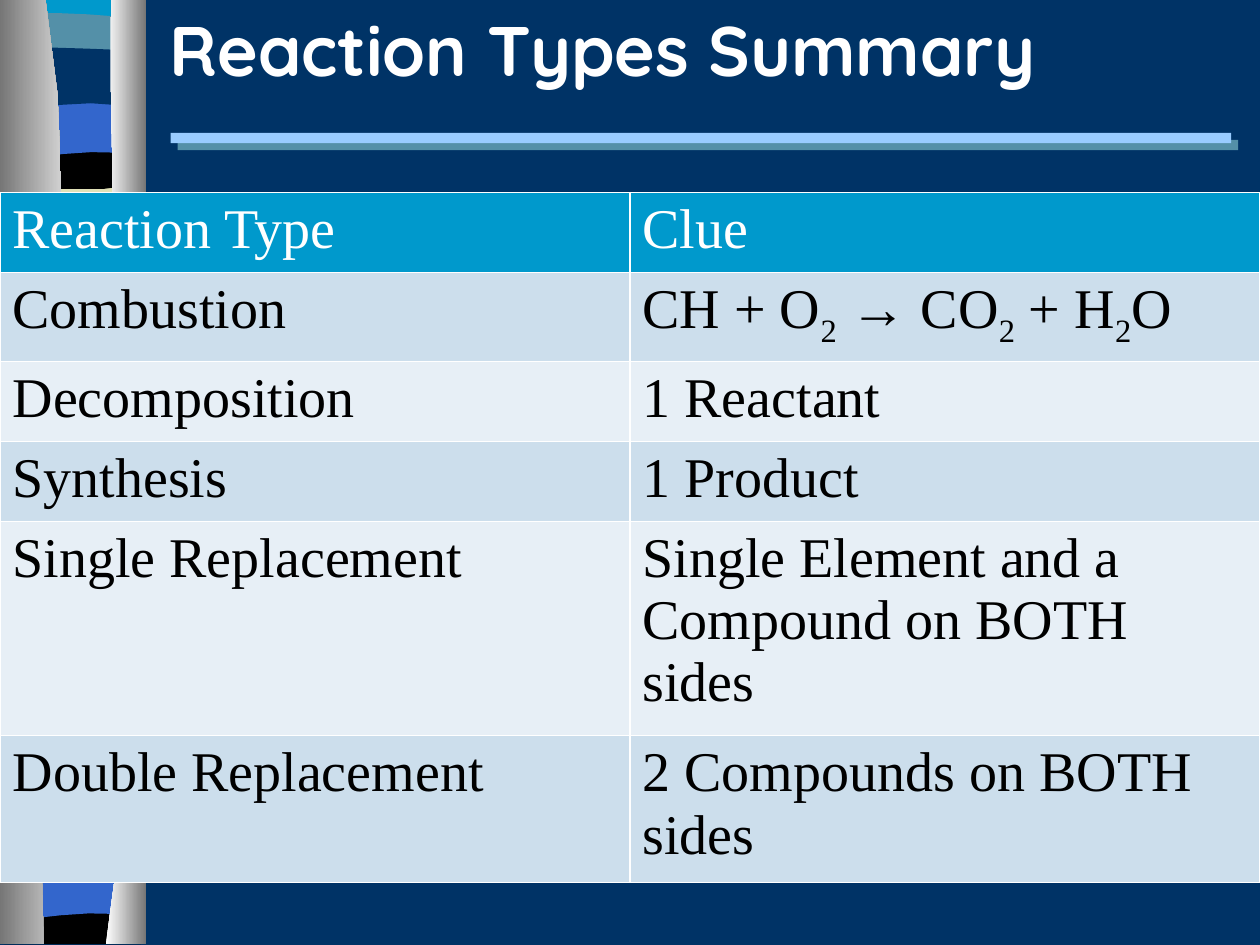
import pptx
import pptx.dml.color
import pptx.enum.shapes
import pptx.enum.text
import pptx.oxml
import pptx.oxml.ns
import pptx.util

Pt = pptx.util.Pt

HUES = {
    "navy": "003366", "cyan": "0099CC", "teal": "5490A8", "sand": "E1E1B7",
    "black": "000000", "blue": "3366CC", "sky": "99CCFF", "white": "FFFFFF",
    "gray": "767676", "pale": "D0D0D0", "dark": "CCDEEC", "light": "E7EFF6",
}

# Outlines in points: a pair is a line to it, six numbers are a Bezier curve.
FORMS = {
    "panel": [(78, 0), (78, 538.5), (0, 538.5), (0, 0)],
    "drape": [(78, 0), (78, 34), (24, 28, 14, 40, 0, 34), (0, 0)],
    "wave": [(78, 0), (78, 34.5), (65, 39.5, 24, 30, 0, 34.5), (0, 0)],
    "lens": [(78, -0.4), (78, 21), (65, 24, 13, 24, 0, 21), (0, -0.4),
             (5, -4, 17, -3.5, 30, -3.5), (43, -3.5, 68, -1, 78, -0.4)],
    "sag": [(78, 0), (78, 27), (65, 31.5, 13, 31.5, 0, 27), (0, 0),
            (48, 3.6, 62, 0, 78, 0)],
    "arch": [(78, 0), (78, 38.5), (66, 34.5, 60, 34.5, 48, 34.5),
             (35, 34.5, 12, 38.5, 0, 38.5), (0, 0)],
    "ripple": [(78, -0.4), (78, 30), (73, 34, 61, 30, 48, 30),
               (35, 30, 8, 34, 0, 30), (0, -0.4),
               (11, -4, 53, -0.4, 66, -0.4), (78, -0.4)],
    "floor": [(78, 0), (78, 27), (0, 27), (0, 0), (48, 3.6, 62, 0, 78, 0)],
    "left": [(26, 0), (52, 156, 12, 213, 25, 540), (0, 540), (0, 0)],
    "right": [(3, 0), (0, 90, 19.5, 465, 0, 540), (23, 540), (23, 0)],
}

# Left edge of each stack, then its bands as form, top and colour.
STACKS = [
    (4, [("panel", -0.7, "cyan"), ("drape", 133, "teal"),
         ("wave", 100, "sand"), ("lens", 11, "teal"), ("sag", 78, "black"),
         ("arch", 52.5, "blue"), ("ripple", 29, "navy")]),
    (3.5, [("drape", 309, "teal"), ("wave", 278.5, "black"),
           ("lens", 188.5, "navy"), ("sag", 254, "sand"),
           ("arch", 230.5, "blue"), ("ripple", 205, "sky")]),
    (2.5, [("drape", 390, "sky"), ("wave", 358, "navy"),
           ("lens", 445, "sand"), ("floor", 512.5, "black"),
           ("arch", 487.5, "blue"), ("ripple", 463, "navy")]),
]

ROWS = [
    (45.5, "Reaction Type", ["Clue"]),
    (45.5, "Combustion",
     ["CH + O", ("2",), " → CO", ("2",), " + H", ("2",), "O"]),
    (45.5, "Decomposition", ["1 Reactant"]),
    (45.5, "Synthesis", ["1 Product"]),
    (122.5, "Single Replacement",
     ["Single Element and a Compound on BOTH sides"]),
    (84, "Double Replacement", ["2 Compounds on BOTH sides"]),
]


def rgb(hue):
    return pptx.dml.color.RGBColor.from_string(HUES[hue])


def paint(item, *hues):
    """Fill with one colour, or shade from left to right with two."""
    if len(hues) == 1:
        item.fill.solid()
        item.fill.fore_color.rgb = rgb(hues[0])
        return
    item.fill.gradient()
    item.fill.gradient_angle = 0
    for stop, hue in zip(item.fill.gradient_stops, hues):
        stop.color.rgb = rgb(hue)


def plain(shape, *hues):
    paint(shape, *hues)
    shape.line.fill.background()
    shape.shadow.inherit = False


def trace(form, steps):
    """Return the outline's points, with its curves cut into short lines."""
    dots = [form[0]]
    for part in form[1:]:
        if len(part) == 2:
            dots.append(part)
            continue
        ends = [dots[-1], part[:2], part[2:4], part[4:]]
        for step in range(1, steps + 1):
            t = step / steps
            u = 1 - t
            parts = (u ** 3, 3 * u * u * t, 3 * u * t * t, t ** 3)
            dots.append(tuple(
                sum(w * end[axis] for w, end in zip(parts, ends))
                for axis in (0, 1)))
    return dots


def draw(slide, form, left, top, *hues, steps=3):
    dots = [(Pt(left + x), Pt(top + y)) for x, y in trace(FORMS[form], steps)]
    pen = slide.shapes.build_freeform(*dots[0], scale=1.0)
    pen.add_line_segments(dots[1:], close=True)
    plain(pen.convert_to_shape(), *hues)


def bar(slide, left, top, hue):
    kind = pptx.enum.shapes.MSO_SHAPE.RECTANGLE
    plain(slide.shapes.add_shape(
        kind, Pt(left), Pt(top), Pt(606), Pt(5.8)), hue)


def write(frame, runs, size=32, font="Times New Roman", hue="black",
          bold=False):
    """Write runs in one paragraph; a run in a tuple is a subscript."""
    frame.word_wrap = True
    for text in runs:
        run = frame.paragraphs[0].add_run()
        run.text = text[0] if isinstance(text, tuple) else text
        run.font.size = Pt(size)
        run.font.name = font
        run.font.bold = bold
        run.font.color.rgb = rgb(hue)
        if isinstance(text, tuple):
            run._r.get_or_add_rPr().set("baseline", "-25000")


def edge(cell):
    """Give the cell thin white borders."""
    props = cell._tc.get_or_add_tcPr()
    space = pptx.oxml.ns.nsdecls("a")
    for spot, side in enumerate("LRTB"):
        props.insert(spot, pptx.oxml.parse_xml(
            f'<a:ln{side} {space} w="12700"><a:solidFill>'
            f'<a:srgbClr val="{HUES["white"]}"/></a:solidFill></a:ln{side}>'))


def grid(slide):
    high = sum(row[0] for row in ROWS)
    table = slide.shapes.add_table(
        len(ROWS), 2, Pt(0), Pt(110), Pt(720), Pt(high)).table
    for r, (tall, name, clue) in enumerate(ROWS):
        table.rows[r].height = Pt(tall)
        back = "cyan" if r == 0 else "dark" if r % 2 else "light"
        for c, runs in enumerate(([name], clue)):
            cell = table.cell(r, c)
            paint(cell, back)
            edge(cell)
            write(cell.text_frame, runs, hue="black" if r else "white")


def title(slide):
    box = slide.shapes.add_textbox(Pt(90), Pt(0), Pt(630), Pt(90))
    box.text_frame.vertical_anchor = pptx.enum.text.MSO_ANCHOR.TOP
    write(box.text_frame, ["Reaction Types Summary"], size=40,
          font="Quicksand", hue="white", bold=True)


def main():
    deck = pptx.Presentation()
    deck.slide_width, deck.slide_height = Pt(720), Pt(540)
    slide = deck.slides.add_slide(deck.slide_layouts[6])
    paint(slide.background, "navy")
    bar(slide, 101.5, 80, "teal")
    bar(slide, 97.5, 76, "sky")
    for left, bands in STACKS:
        for form, top, hue in bands:
            draw(slide, form, left, top, hue)
    draw(slide, "left", 0, -0.5, "gray", "pale", steps=8)
    draw(slide, "right", 60.5, -0.5, "white", "gray", steps=8)
    title(slide)
    grid(slide)
    deck.save("out.pptx")


if __name__ == "__main__":
    main()
